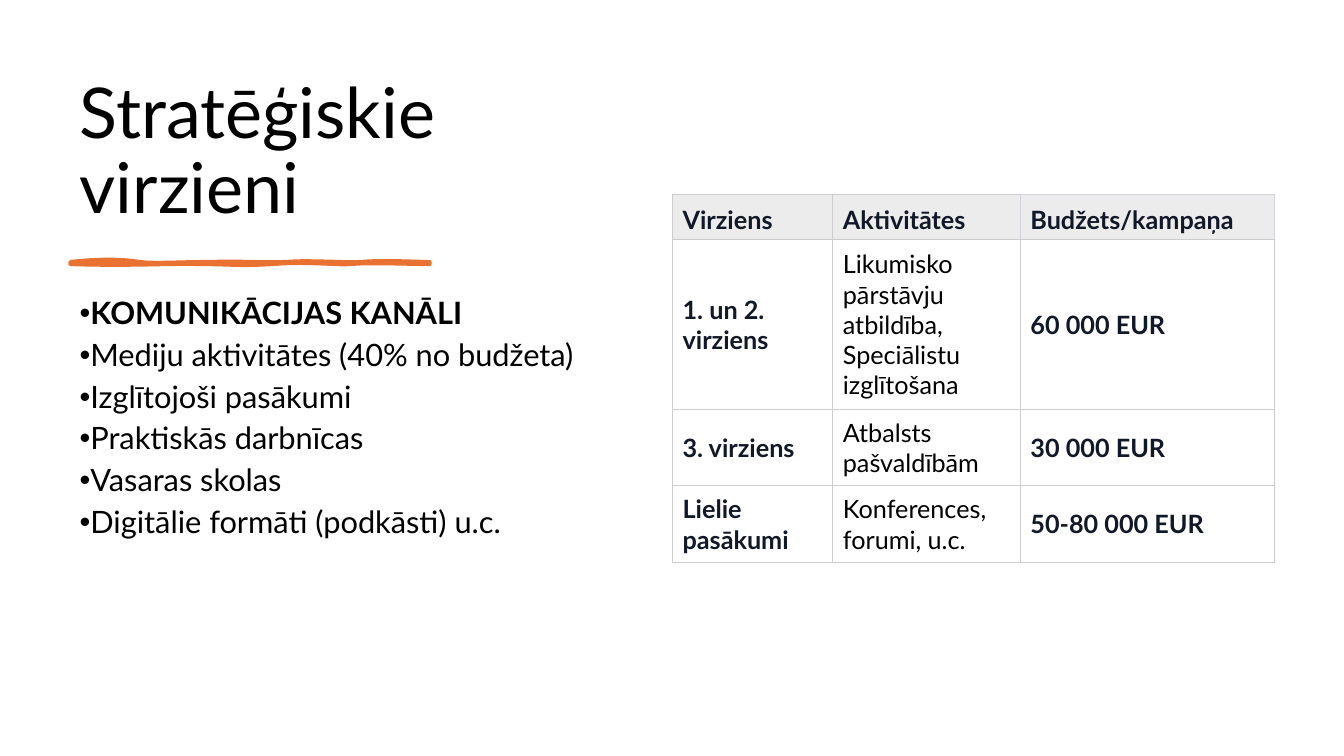
from lxml import etree
from pptx import Presentation
from pptx.dml.color import RGBColor
from pptx.enum.text import MSO_ANCHOR, MSO_AUTO_SIZE, PP_ALIGN
from pptx.oxml import parse_xml
from pptx.oxml.ns import nsdecls, qn
from pptx.util import Inches, Pt

COLORS = {
    "black": "000000",
    "navy": "111827",
    "orange": "E97132",
    "header": "ECECEC",
    "white": "FFFFFF",
    "border": "CDCDCD",
    "header_border": "D1D5DB",
}

TITLE = "Stratēģiskie virzieni"
CHANNELS = [
    "KOMUNIKĀCIJAS KANĀLI",
    "Mediju aktivitātes (40% no budžeta)",
    "Izglītojoši pasākumi",
    "Praktiskās darbnīcas",
    "Vasaras skolas",
    "Digitālie formāti (podkāsti) u.c.",
]
BUDGET_ROWS = [
    ["Virziens", "Aktivitātes", "Budžets/kampaņa"],
    ["1. un 2. virziens", "Likumisko pārstāvju atbildība, Speciālistu izglītošana", "60 000 EUR"],
    ["3. virziens", "Atbalsts pašvaldībām", "30 000 EUR"],
    ["Lielie pasākumi", "Konferences, forumi, u.c.", "50-80 000 EUR"],
]
COLUMN_WIDTHS = [1.59, 1.86, 2.52]
ROW_HEIGHTS = [0.45, 1.68, 0.76, 0.76]

# Hand-drawn rule: start point, then two control points and an end point per curve
STROKE_START = (0.7, 2.6)
STROKE_CURVES = [
    ((0.97, 2.57), (1.21, 2.57), (1.38, 2.6)),
    ((1.55, 2.62), (1.77, 2.6), (2.09, 2.6)),
    ((2.41, 2.59), (2.6, 2.61), (2.84, 2.6)),
    ((3.08, 2.58), (3.39, 2.61), (3.59, 2.6)),
    ((3.79, 2.58), (4.12, 2.6), (4.26, 2.6)),
    ((4.26, 2.6), (4.26, 2.61), (4.26, 2.62)),
    ((4.08, 2.62), (3.64, 2.6), (3.48, 2.62)),
    ((3.32, 2.63), (3.04, 2.59), (2.7, 2.62)),
    ((2.35, 2.64), (2.31, 2.62), (1.99, 2.62)),
    ((1.66, 2.61), (1.32, 2.64), (0.7, 2.62)),
]


def apply_format(target, values):
    for name, value in values.items():
        setattr(target, name, value)


def curve_points(start, curves, steps=10):
    """Sample the chain of cubic curves as points in EMU."""
    points = []
    for first, second, end in curves:
        for step in range(1, steps + 1):
            t = step / steps
            weights = ((1 - t) ** 3, 3 * t * (1 - t) ** 2, 3 * t * t * (1 - t), t ** 3)
            points.append(tuple(
                Inches(sum(weight * value for weight, value in zip(weights, axis)))
                for axis in zip(start, first, second, end)
            ))
        start = end
    return points


class SlideBuilder:
    font_name = "Lato"

    def __init__(self, presentation):
        self.slide = presentation.slides.add_slide(presentation.slide_layouts[1])

    def color(self, name):
        return RGBColor.from_string(COLORS[name])

    def add_text(self, paragraph, text, size, color="black", bold=False):
        run = paragraph.add_run()
        run.text = text
        apply_format(run.font, {"name": self.font_name, "size": Pt(size), "bold": bold})
        run.font.color.rgb = self.color(color)

    def place(self, shape, box, anchor):
        left, top, width, height = map(Inches, box)
        apply_format(shape, {"left": left, "top": top, "width": width, "height": height})
        apply_format(shape.text_frame, {
            "word_wrap": True,
            "auto_size": MSO_AUTO_SIZE.NONE,
            "vertical_anchor": anchor,
        })

    def title(self, text, box):
        shape = self.slide.shapes.title
        self.place(shape, box, MSO_ANCHOR.BOTTOM)
        paragraph = shape.text_frame.paragraphs[0]
        apply_format(paragraph, {"alignment": PP_ALIGN.LEFT, "line_spacing": 0.9})
        self.add_text(paragraph, text, 50)

    def bullets(self, items, box):
        shape = self.slide.placeholders[1]
        self.place(shape, box, MSO_ANCHOR.TOP)
        for index, text in enumerate(items):
            frame = shape.text_frame
            paragraph = frame.add_paragraph() if index else frame.paragraphs[0]
            apply_format(paragraph, {
                "alignment": PP_ALIGN.LEFT,
                "line_spacing": 0.9,
                "space_before": Pt(0),
                "space_after": Pt(6),
            })
            properties = paragraph._p.get_or_add_pPr()
            properties.set("marL", "0")
            properties.set("indent", str(Inches(-0.25)))
            etree.SubElement(properties, qn("a:buFont")).set("typeface", "Arial")
            etree.SubElement(properties, qn("a:buChar")).set("char", "•")
            self.add_text(paragraph, text, 22, bold=index == 0)

    def stroke(self, start, curves, color, width):
        builder = self.slide.shapes.build_freeform(*map(Inches, start))
        builder.add_line_segments(curve_points(start, curves), close=True)
        shape = builder.convert_to_shape()
        shape.shadow.inherit = False
        shape.fill.solid()
        shape.fill.fore_color.rgb = self.color(color)
        shape.line.color.rgb = self.color(color)
        shape.line.width = Pt(width)

    def border(self, cell, side, color, width):
        cell._tc.get_or_add_tcPr().append(parse_xml(
            f'<a:ln{side} {nsdecls("a")} w="{Pt(width)}"><a:solidFill>'
            f'<a:srgbClr val="{COLORS[color]}"/></a:solidFill></a:ln{side}>'
        ))

    def table(self, rows, widths, heights, left, top):
        table = self.slide.shapes.add_table(
            len(rows), len(widths), Inches(left), Inches(top),
            Inches(sum(widths)), Inches(sum(heights)),
        ).table
        apply_format(table, {"first_row": False, "horz_banding": False})
        for column, width in zip(table.columns, widths):
            column.width = Inches(width)
        for row, height in zip(table.rows, heights):
            row.height = Inches(height)
        for row_index, texts in enumerate(rows):
            for column_index, text in enumerate(texts):
                self.table_cell(table, row_index, column_index, text)

    def table_cell(self, table, row, column, text):
        cell = table.cell(row, column)
        header, last = row == 0, row == len(table.rows) - 1
        plain = column == 1 and not header

        # Borders: thin outside and between columns, thicker between rows
        tint = [
            "header_border" if header and column >= limit else "border"
            for limit in (2, 1, 2)
        ]
        self.border(cell, "L", tint[0], 0.6)
        self.border(cell, "R", tint[1], 0.6)
        self.border(cell, "T", tint[2], 0.6 if header else 1)
        self.border(cell, "B", "border", 0.6 if last else 1)

        cell.fill.solid()
        cell.fill.fore_color.rgb = self.color("header" if header else "white")
        cell.vertical_anchor = MSO_ANCHOR.BOTTOM if header else MSO_ANCHOR.MIDDLE
        self.add_text(cell.text_frame.paragraphs[0], text, 18,
                      "black" if plain else "navy", bold=not plain)


def main():
    presentation = Presentation()
    apply_format(presentation, {"slide_width": Inches(13.33), "slide_height": Inches(7.5)})
    builder = SlideBuilder(presentation)

    # Left side: title, rule and channel list
    builder.title(TITLE, (0.69, 0.7, 5.27, 1.62))
    builder.stroke(STROKE_START, STROKE_CURVES, "orange", 3)
    builder.bullets(CHANNELS, (0.69, 2.91, 5.27, 3.88))

    # Right side: budget table
    builder.table(BUDGET_ROWS, COLUMN_WIDTHS, ROW_HEIGHTS, 6.67, 1.93)

    presentation.save("out.pptx")


if __name__ == "__main__":
    main()
